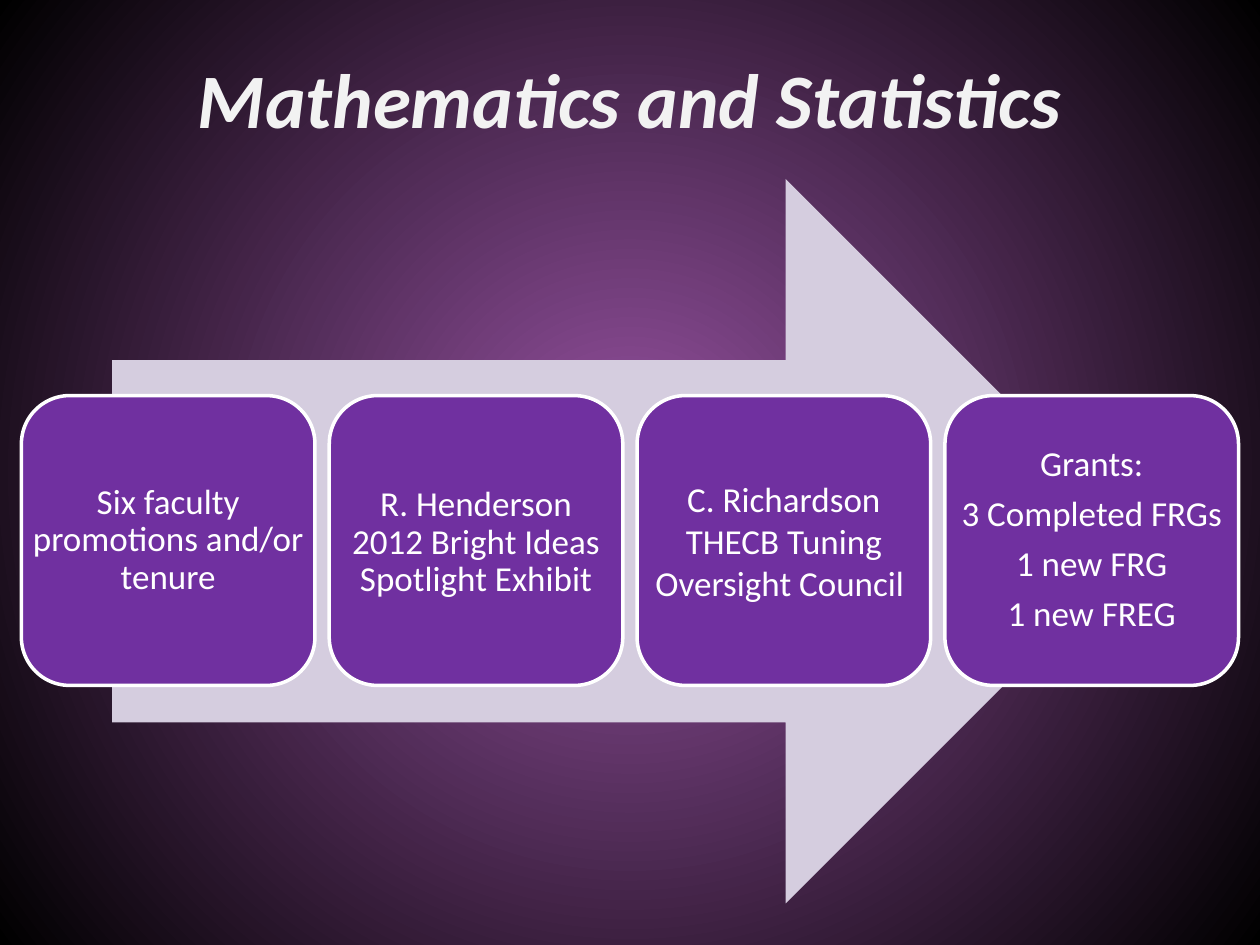
"""Builds the Mathematics and Statistics achievements slide."""
import lxml.etree
import pptx
import pptx.dml.color
import pptx.enum.shapes
import pptx.enum.text
import pptx.oxml.ns
import pptx.util

Inches, Pt = pptx.util.Inches, pptx.util.Pt
RGBColor = pptx.dml.color.RGBColor
MSO_SHAPE = pptx.enum.shapes.MSO_SHAPE
PP_ALIGN = pptx.enum.text.PP_ALIGN
MSO_ANCHOR = pptx.enum.text.MSO_ANCHOR
qn = pptx.oxml.ns.qn

GLOW = RGBColor(0x96, 0x51, 0xA1)
BLACK = RGBColor(0x00, 0x00, 0x00)
OFF_WHITE = RGBColor(0xF2, 0xF2, 0xF2)
WHITE = RGBColor(0xFF, 0xFF, 0xFF)
LAVENDER = RGBColor(0xD5, 0xCD, 0xDF)
PURPLE = RGBColor(0x70, 0x30, 0xA0)

CARDS = [
    [("Six faculty promotions and/or tenure", True)],
    [("R. Henderson", False), ("2012 Bright Ideas Spotlight Exhibit", True)],
    [("C. Richardson", False), ("THECB Tuning Oversight Council ", False)],
    [(line, True) for line in ("Grants:", "3 Completed FRGs", "1 new FRG", "1 new FREG")],
]
CARD_LEFT, CARD_TOP, CARD_WIDTH, CARD_HEIGHT = 0.17, 3.14, 2.33, 2.3
CARD_STEP = (10 - 2 * CARD_LEFT - CARD_WIDTH) / (len(CARDS) - 1)


def format_paragraph(p, size, color):
    p.alignment = PP_ALIGN.CENTER
    for r in p.runs:
        r.font.name = "Calibri"
        r.font.size = Pt(size)
        r.font.color.rgb = color


prs = pptx.Presentation()
prs.slide_width, prs.slide_height = Inches(10), Inches(7.5)
s = prs.slides.add_slide(prs.slide_layouts[5])

fill = s.background.fill
fill.gradient()
for stop, position, color in zip(fill.gradient_stops, (0, 1), (GLOW, BLACK)):
    stop.position = position
    stop.color.rgb = color
grad = s.background.element.find(".//" + qn("a:gradFill"))
grad.remove(grad.find(qn("a:lin")))
circle = lxml.etree.SubElement(grad, qn("a:path"), {"path": "circle"})
lxml.etree.SubElement(circle, qn("a:fillToRect"), dict.fromkeys("ltrb", "50000"))

title = s.shapes.title
title.left, title.top = Inches(0.5), Inches(0.3)
title.width, title.height = Inches(9), Inches(0.95)
tf = title.text_frame
tf.text = "Mathematics and Statistics"
tf.vertical_anchor = MSO_ANCHOR.MIDDLE
p = tf.paragraphs[0]
format_paragraph(p, 44, OFF_WHITE)
p.runs[0].font.bold = True
p.runs[0].font.italic = True

arrow = s.shapes.add_shape(MSO_SHAPE.RIGHT_ARROW, Inches(0.89), Inches(1.42), Inches(8.22), Inches(5.75))
arrow.shadow.inherit = False
arrow.fill.solid()
arrow.fill.fore_color.rgb = LAVENDER
arrow.line.fill.background()

for i, lines in enumerate(CARDS):
    box = [Inches(n) for n in (CARD_LEFT + i * CARD_STEP, CARD_TOP, CARD_WIDTH, CARD_HEIGHT)]
    card = s.shapes.add_shape(MSO_SHAPE.ROUNDED_RECTANGLE, *box)
    card.shadow.inherit = False
    card.fill.solid()
    card.fill.fore_color.rgb = PURPLE
    card.line.color.rgb = WHITE
    card.line.width = Pt(2)

    tf = s.shapes.add_textbox(*box).text_frame
    tf.word_wrap = True
    tf.vertical_anchor = MSO_ANCHOR.MIDDLE
    tf.margin_left = tf.margin_right = tf.margin_top = tf.margin_bottom = Inches(0.08)
    tf.text = "\n".join(text for text, spaced in lines)
    for p, (text, spaced) in zip(tf.paragraphs, lines):
        format_paragraph(p, 20, WHITE)
        if spaced:
            p.line_spacing = 0.9
            p.space_after = Pt(7)

prs.save("out.pptx")
